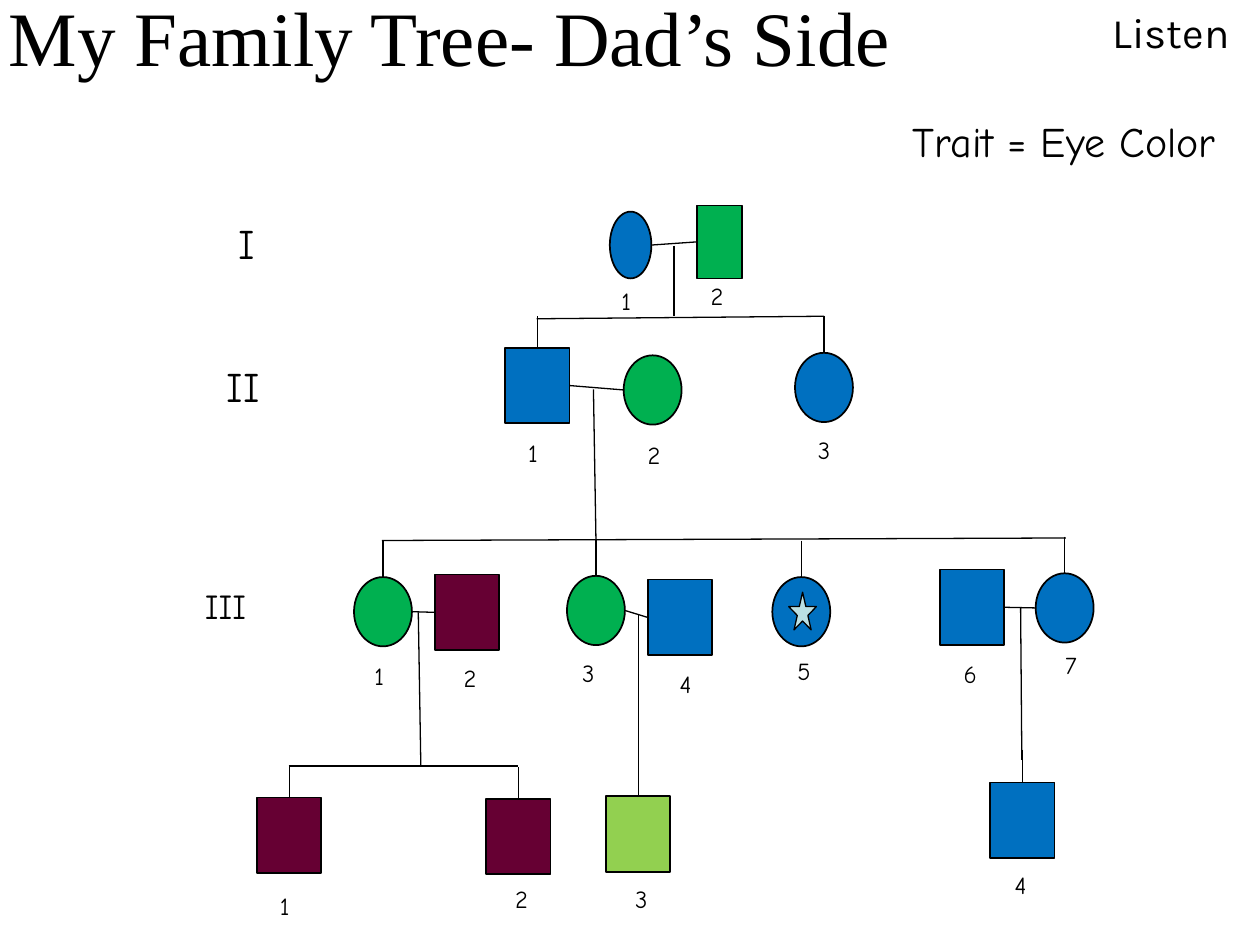
from lxml.etree import SubElement
from pptx import Presentation
from pptx.dml.color import RGBColor as RGB
from pptx.enum.shapes import MSO_CONNECTOR as Link, MSO_SHAPE as Form
from pptx.enum.text import MSO_ANCHOR as Anchor, PP_ALIGN as Align
from pptx.oxml.ns import qn
from pptx.util import Inches, Pt

COLORS = {"ink": "000000", "blue": "0070C0", "green": "00B050",
          "wine": "660033", "lime": "92D050", "star": "BBE0E3"}
KINDS = {"man": (Form.RECTANGLE, 0.51, 0.6), "woman": (Form.OVAL, 0.46, 0.55),
         "elder man": (Form.RECTANGLE, 0.36, 0.58), "elder woman": (Form.OVAL, 0.33, 0.53),
         "star": (Form.STAR_5_POINT, 0.22, 0.3)}
HAND = "Comic Neue"
FRAME = {"word_wrap": True, "vertical_anchor": Anchor.TOP}

# people: kind, color, x, y, drop line start (or None), label x, label y
ROWS = [
    {"top": 1.5, "name": ("I", 1.63, 0.18, 24), "mates": [(1, 2)],
     "bars": [(5.35, 0.45, 5.35, 1.01)],
     "folk": [("elder woman", "blue", 4.84, 0.18, None, 4.63, 0.72),
              ("elder man", "green", 5.53, 0.13, None, 5.35, 0.68)]},
    {"top": 2.5, "name": ("II", 1.6, 0.31, 24), "mates": [(1, 2)],
     "bars": [(4.26, 0.03, 6.54, 0.01), (4.71, 0.59, 4.73, 1.79)],
     "folk": [("man", "blue", 4.01, 0.26, 0.01, 3.89, 0.93),
              ("woman", "green", 4.95, 0.32, None, 4.85, 0.94),
              ("woman", "blue", 6.31, 0.3, 0.01, 6.2, 0.9)]},
    {"top": 4, "name": ("III", 1.46, 0.59, 20), "mates": [(1, 2), (3, 4), (6, 7)],
     "bars": [(3.03, 0.29, 8.46, 0.27), (3.32, 0.86, 3.34, 2.07),
              (5.07, 0.87, 5.07, 2.18), (8.1, 0.82, 8.11, 2.03)],
     "folk": [("woman", "green", 2.81, 0.58, 0.29, 2.67, 1.2),
              ("man", "wine", 3.45, 0.56, None, 3.39, 1.21),
              ("woman", "green", 4.5, 0.57, 0.28, 4.33, 1.17),
              ("man", "blue", 5.14, 0.6, None, 5.1, 1.26),
              ("woman", "blue", 6.13, 0.58, 0.29, 6.04, 1.16),
              ("man", "blue", 7.46, 0.52, None, 7.36, 1.18),
              ("woman", "blue", 8.22, 0.55, 0.26, 8.16, 1.11)]},
    {"top": 6, "name": None, "mates": [], "bars": [(2.29, 0.08, 4.11, 0.08)],
     "folk": [("man", "wine", 2.04, 0.33, 0.08, 1.92, 1.02),
              ("man", "wine", 3.86, 0.34, 0.09, 3.8, 0.97),
              ("man", "lime", 4.81, 0.32, 0.07, 4.75, 0.97),
              ("man", "blue", 7.86, 0.21, -0.05, 7.76, 0.86)]},
]


def paint(part, color):
    """Give a fill or line format one solid color."""
    part.fill.solid()
    part.fill.fore_color.rgb = RGB.from_string(COLORS[color])


def write(shape, text, size, face=HAND, **frame):
    """Put one centred line of text in a shape."""
    box = shape.text_frame
    for key, value in {**FRAME, **frame}.items():
        setattr(box, key, value)
    para = box.paragraphs[0]
    para.alignment = Align.CENTER
    run = para.add_run()
    run.text = text
    for key, value in {"size": Pt(size), "name": face}.items():
        setattr(run.font, key, value)
    paint(run.font, "ink")


def note(slide, box, text, size, face=HAND):
    """Add a text box at left, top, width, height in inches."""
    write(slide.shapes.add_textbox(*map(Inches, box)), text, size, face)


def draw(slide, kind, color, left, top, width=1):
    """Add one outlined symbol of the family tree."""
    form, wide, high = KINDS[kind]
    shape = slide.shapes.add_shape(form, *map(Inches, (left, top, wide, high)))
    shape.shadow.inherit = False
    paint(shape, color)
    paint(shape.line, "ink")
    shape.line.width = Pt(width)
    return shape


def link(slide, ends):
    """Add a thin line between two points given as lengths."""
    line = slide.shapes.add_connector(Link.STRAIGHT, *ends)
    paint(line.line, "ink")
    line.line.width = Pt(0.75)
    SubElement(line._element.spPr, qn("a:effectLst"))
    return line


def wed(slide, left, right):
    """Join the facing sides of two partners."""
    line = link(slide, (left.left + left.width, left.top + left.height // 2,
                        right.left, right.top + right.height // 2))
    if left.auto_shape_type == Form.RECTANGLE:
        line.begin_connect(left, 3)
    if right.auto_shape_type == Form.RECTANGLE:
        line.end_connect(right, 1)


def row(slide, left, top, name, folk, mates, bars):
    """Place one generation with its lines and labels from a corner."""
    if name:
        text, x, y, size = name
        note(slide, (left + x, top + y, 0.66, 0.5), text, size)
    for x1, y1, x2, y2 in bars:
        link(slide, map(Inches, (left + x1, top + y1, left + x2, top + y2)))
    people = []
    for rank, (kind, color, x, y, drop, tag_x, tag_y) in enumerate(folk, 1):
        shape = draw(slide, kind, color, left + x, top + y)
        people.append(shape)
        if drop is not None:
            mid = shape.left + shape.width // 2
            link(slide, (mid, Inches(top + drop), mid, shape.top)).end_connect(shape, 0)
        note(slide, (left + tag_x, top + tag_y, 0.68, 0.34), str(rank), 14)
    for one, two in mates:
        wed(slide, people[one - 1], people[two - 1])


def head(slide, left, top):
    """Place the title and the two notes beside it from a corner."""
    title = slide.shapes.title
    spot = {"left": left - 0.68, "top": top - 0.34, "width": 8.5, "height": 1.25}
    for key, value in spot.items():
        setattr(title, key, Inches(value))
    write(title, "My Family Tree- Dad’s Side", 44, "Times New Roman",
          vertical_anchor=Anchor.MIDDLE)
    note(slide, (left + 8.59, top, 1.41, 0.5), "Listen", 24, "Karla")
    note(slide, (left + 6.77, top + 0.87, 3.35, 0.5), "Trait = Eye Color", 24)


def main():
    """Build and save the slide."""
    deck = Presentation()
    deck.slide_width, deck.slide_height = Inches(10), Inches(7.5)
    slide = deck.slides.add_slide(deck.slide_layouts[5])
    head(slide, 0, 0)
    for data in ROWS:
        row(slide, 0, **data)
    draw(slide, "star", "star", 6.26, 4.7, 0.75)
    deck.save("out.pptx")


if __name__ == "__main__":
    main()
